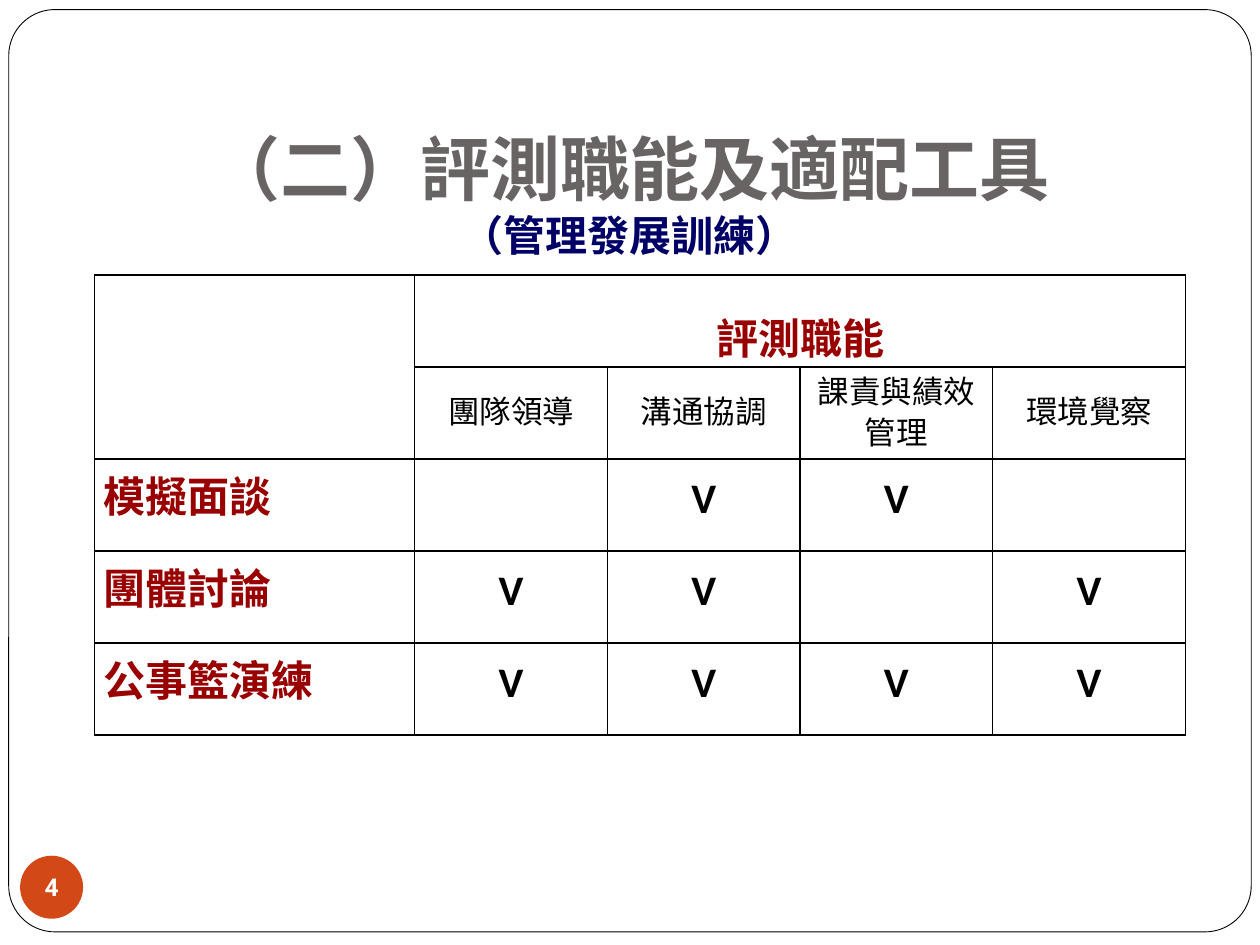
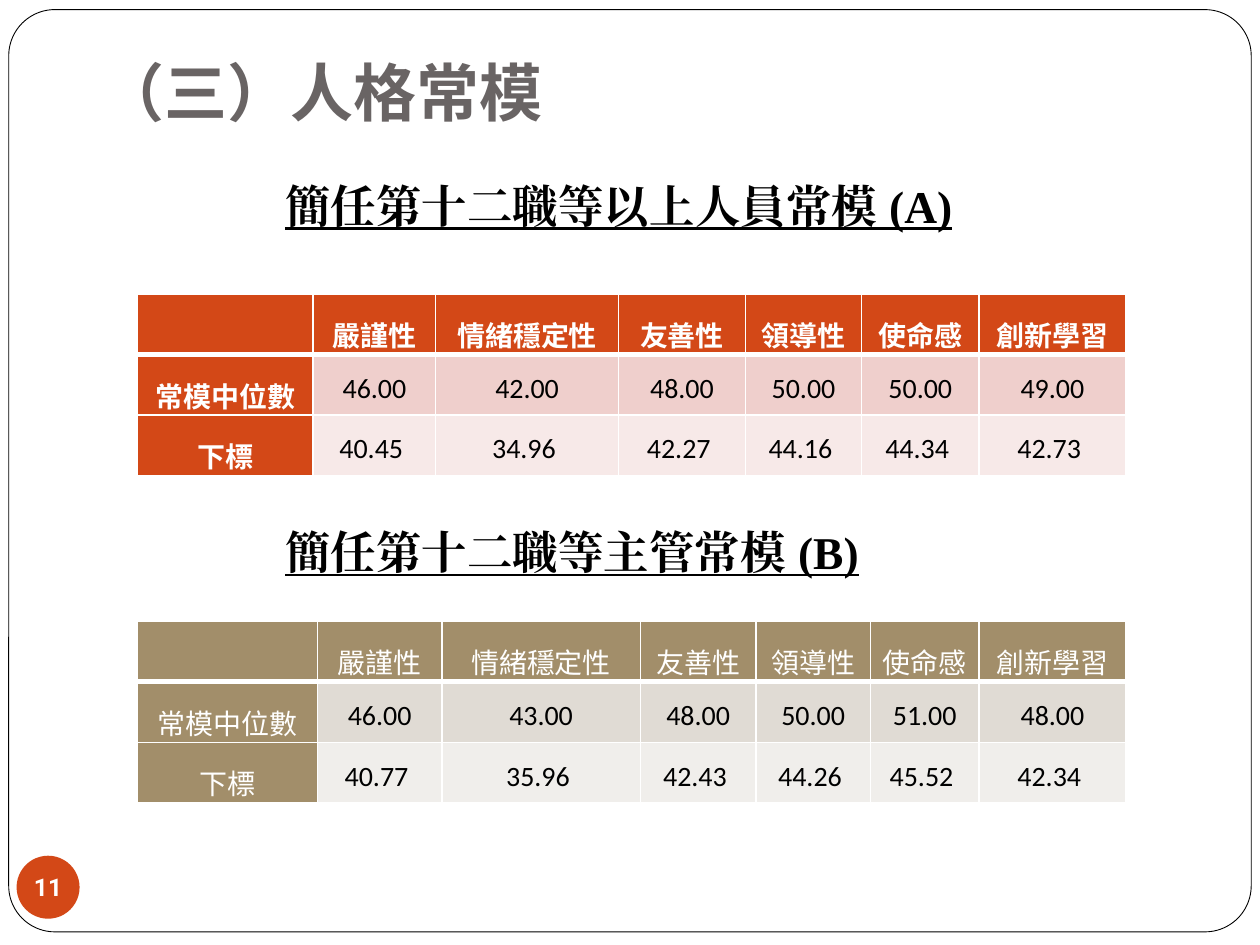
from lxml.etree import SubElement
from pptx import Presentation
from pptx.dml.color import RGBColor
from pptx.enum.shapes import MSO_SHAPE
from pptx.enum.text import MSO_ANCHOR, MSO_AUTO_SIZE, PP_ALIGN
from pptx.oxml.ns import qn
from pptx.util import Pt

# Shared colours
WHITE = RGBColor(0xFF, 0xFF, 0xFF)
BLACK = RGBColor(0, 0, 0)
GREY = RGBColor(0x69, 0x64, 0x64)
NAVY = RGBColor(0, 0, 0x66)
DARK_RED = RGBColor(0x99, 0, 0)
ORANGE = RGBColor(0xD3, 0x48, 0x17)
ORANGE_MID = RGBColor(0xEF, 0xCF, 0xCC)
ORANGE_PALE = RGBColor(0xF7, 0xE9, 0xE8)
TAN = RGBColor(0xA2, 0x8E, 0x6A)
TAN_MID = RGBColor(0xE0, 0xDB, 0xD4)
TAN_PALE = RGBColor(0xF0, 0xEE, 0xEB)

# Shared fonts
TITLE_FONT = "Roboto"
BODY_FONT = "Calibri"
SERIF = "Times New Roman"
CJK = "Noto Sans CJK SC"

TRAITS = ["嚴謹性", "情緒穩定性", "友善性", "領導性", "使命感", "創新學習"]


def write(paragraph, text, size, color, font=BODY_FONT, cjk=None, bold=True,
          underline=None, align=None, spacing=None):
    """Add one formatted run to a paragraph."""
    run = paragraph.add_run()
    run.text = text
    run.font.name = font
    run.font.size = Pt(size)
    run.font.bold = bold
    run.font.underline = underline
    run.font.color.rgb = color
    latin = run.font._element.find(qn("a:latin"))
    east_asian = latin.makeelement(qn("a:ea"), {"typeface": cjk or font})
    latin.addnext(east_asian)
    if align is not None:
        paragraph.alignment = align
    if spacing is not None:
        paragraph.line_spacing = spacing


def set_frame(frame, anchor, left=7.2, top=3.6, right=7.2, bottom=7.2, wrap=True):
    frame.auto_size = MSO_AUTO_SIZE.NONE
    frame.word_wrap = wrap
    frame.vertical_anchor = anchor
    frame.margin_left, frame.margin_top = Pt(left), Pt(top)
    frame.margin_right, frame.margin_bottom = Pt(right), Pt(bottom)


def place(part, box):
    part.left, part.top, part.width, part.height = map(Pt, box)


def add_slide(prs, number, badge_left):
    """Start a slide with the rounded page frame and the number badge."""
    slide = prs.slides.add_slide(prs.slide_layouts[5])
    page = slide.shapes.add_shape(MSO_SHAPE.ROUNDED_RECTANGLE,
                                  *map(Pt, (5, 5.5, 710, 527)))
    page.adjustments[0] = 0.05
    page.shadow.inherit = False
    page.fill.solid()
    page.fill.fore_color.rgb = WHITE
    page.line.color.rgb = BLACK
    page.line.width = Pt(0.5)
    slide.shapes._spTree.insert(2, page._element)  # behind the title

    badge = slide.shapes.add_shape(MSO_SHAPE.OVAL,
                                   *map(Pt, (badge_left, 489, 36, 36)))
    badge.shadow.inherit = False
    badge.fill.solid()
    badge.fill.fore_color.rgb = ORANGE
    badge.line.fill.background()
    set_frame(badge.text_frame, MSO_ANCHOR.MIDDLE, 0, 0, 0, 0, wrap=False)
    write(badge.text_frame.paragraphs[0], number, 14, WHITE, TITLE_FONT,
          align=PP_ALIGN.CENTER)
    return slide


def add_title(slide, box, text, size, align, subtitle=None, bottom=7.2):
    title = slide.shapes.title
    place(title, box)
    set_frame(title.text_frame, MSO_ANCHOR.BOTTOM, bottom=bottom)
    heading = title.text_frame.paragraphs[0]
    write(heading, text, size, GREY, TITLE_FONT, align=align)
    if subtitle:
        heading.add_line_break()
        write(heading, subtitle, 24, NAVY, TITLE_FONT)


def set_borders(cell, color, width, bottom=None):
    props = cell._tc.get_or_add_tcPr()
    for index, side in enumerate(("lnL", "lnR", "lnT", "lnB")):
        weight = bottom if side == "lnB" and bottom else width
        line = props.makeelement(qn("a:" + side), {"w": str(Pt(weight))})
        fill = SubElement(line, qn("a:solidFill"))
        SubElement(fill, qn("a:srgbClr"), val=str(color))
        props.insert(index, line)


def add_grid(slide, box, widths, heights):
    """Add a bare table whose cells are still to be styled."""
    grid = slide.shapes.add_table(len(heights), len(widths), *map(Pt, box)).table
    for column, width in zip(grid.columns, widths):
        column.width = Pt(width)
    for row, height in zip(grid.rows, heights):
        row.height = Pt(height)
    return grid


def style_cell(cell, fill, border, anchor, bottom=None):
    cell.margin_left = cell.margin_right = Pt(5)
    cell.margin_top = cell.margin_bottom = 0
    cell.vertical_anchor = anchor
    cell.fill.solid()
    cell.fill.fore_color.rgb = fill
    set_borders(cell, border, 1, bottom)


def add_tool_matrix(slide, box):
    """Competencies across, assessment tools down, V where they match."""
    competencies = ["團隊領導", "溝通協調", "課責與績效管理", "環境覺察"]
    tools = {"模擬面談": (1, 2), "團體討論": (0, 1, 3), "公事籃演練": (0, 1, 2, 3)}
    label_width = 183
    width = (box[2] - label_width) / len(competencies)
    rows = len(tools) + 2
    grid = add_grid(slide, box, [label_width] + [width] * len(competencies),
                    [box[3] / rows] * rows)
    for cell in grid.iter_cells():
        style_cell(cell, WHITE, BLACK, MSO_ANCHOR.MIDDLE)
    grid.cell(0, 0).merge(grid.cell(1, 0))
    grid.cell(0, 1).merge(grid.cell(0, len(competencies)))

    def fill_in(row, column, text, size=24, color=BLACK, **style):
        style = {"cjk": CJK, "align": PP_ALIGN.CENTER, "spacing": Pt(23), **style}
        write(grid.cell(row, column).text_frame.paragraphs[0], text, size, color,
              **style)

    fill_in(0, 1, "評測職能", color=DARK_RED, spacing=1.5)
    for column, competency in enumerate(competencies, 1):
        fill_in(1, column, competency, size=18, bold=False)
    for row, (tool, matches) in enumerate(tools.items(), 2):
        fill_in(row, 0, tool, color=DARK_RED, font=CJK, align=PP_ALIGN.LEFT)
        for match in matches:
            fill_in(row, match + 1, "V")


def add_norm_heading(slide, box, text):
    heading = slide.shapes.add_textbox(*map(Pt, box))
    set_frame(heading.text_frame, MSO_ANCHOR.BOTTOM)
    write(heading.text_frame.paragraphs[0], text, 26, BLACK, SERIF, underline=True)


def add_norm_table(slide, box, widths, medians, lower_limits, shades, bold_labels):
    """Trait norms: a header row, the medians and the lower limits."""
    strong = shades[0]
    rows = [["", *TRAITS],
            ["常模中位數", *medians.split()],
            ["下標", *(value + " " for value in lower_limits.split())]]
    grid = add_grid(slide, box, widths, [box[3] / len(rows)] * len(rows))
    for r, values in enumerate(rows):
        for c, value in enumerate(values):
            cell = grid.cell(r, c)
            is_label = r == 0 or c == 0
            style_cell(cell, strong if is_label else shades[r], WHITE,
                       MSO_ANCHOR.TOP, bottom=3 if r == 0 else None)
            if not value:
                continue
            paragraph = cell.text_frame.paragraphs[0]
            if is_label:
                write(paragraph, value, 16, WHITE, SERIF, CJK, bold_labels,
                      align=PP_ALIGN.CENTER, spacing=1.5)
            else:
                write(paragraph, value, 16, BLACK, bold=False,
                      align=PP_ALIGN.CENTER, spacing=1.5)


def build_tools_slide(prs):
    slide = add_slide(prs, "4", 11.5)
    add_title(slide, (54, 65.5, 612, 90), "（二）評測職能及適配工具", 40,
              PP_ALIGN.CENTER, subtitle="（管理發展訓練）")
    add_tool_matrix(slide, (54, 157, 623.5, 263))


def build_norms_slide(prs):
    slide = add_slide(prs, "11", 9.5)
    add_title(slide, (51, 31.5, 612, 82), "（三）人格常模", 36, PP_ALIGN.LEFT,
              bottom=39.5)
    # Norm A
    add_norm_heading(slide, (156, 94.5, 425, 45.5), "簡任第十二職等以上人員常模 (A)")
    add_norm_table(slide, (78.5, 168, 565, 102),
                   [100.5, 70, 104.5, 72.5, 66.5, 67, 84],
                   "46.00 42.00 48.00 50.00 50.00 49.00",
                   "40.45 34.96 42.27 44.16 44.34 42.73",
                   (ORANGE, ORANGE_MID, ORANGE_PALE), bold_labels=True)
    # Norm B
    add_norm_heading(slide, (156, 297.5, 374, 40.5), "簡任第十二職等主管常模 (B)")
    add_norm_table(slide, (78.5, 355, 565, 102),
                   [103, 71, 113.5, 66, 65.5, 62, 84],
                   "46.00 43.00 48.00 50.00 51.00 48.00",
                   "40.77 35.96 42.43 44.26 45.52 42.34",
                   (TAN, TAN_MID, TAN_PALE), bold_labels=False)


def main():
    prs = Presentation()
    prs.slide_width, prs.slide_height = Pt(720), Pt(540)
    build_tools_slide(prs)
    build_norms_slide(prs)
    prs.save("out.pptx")


if __name__ == "__main__":
    main()
